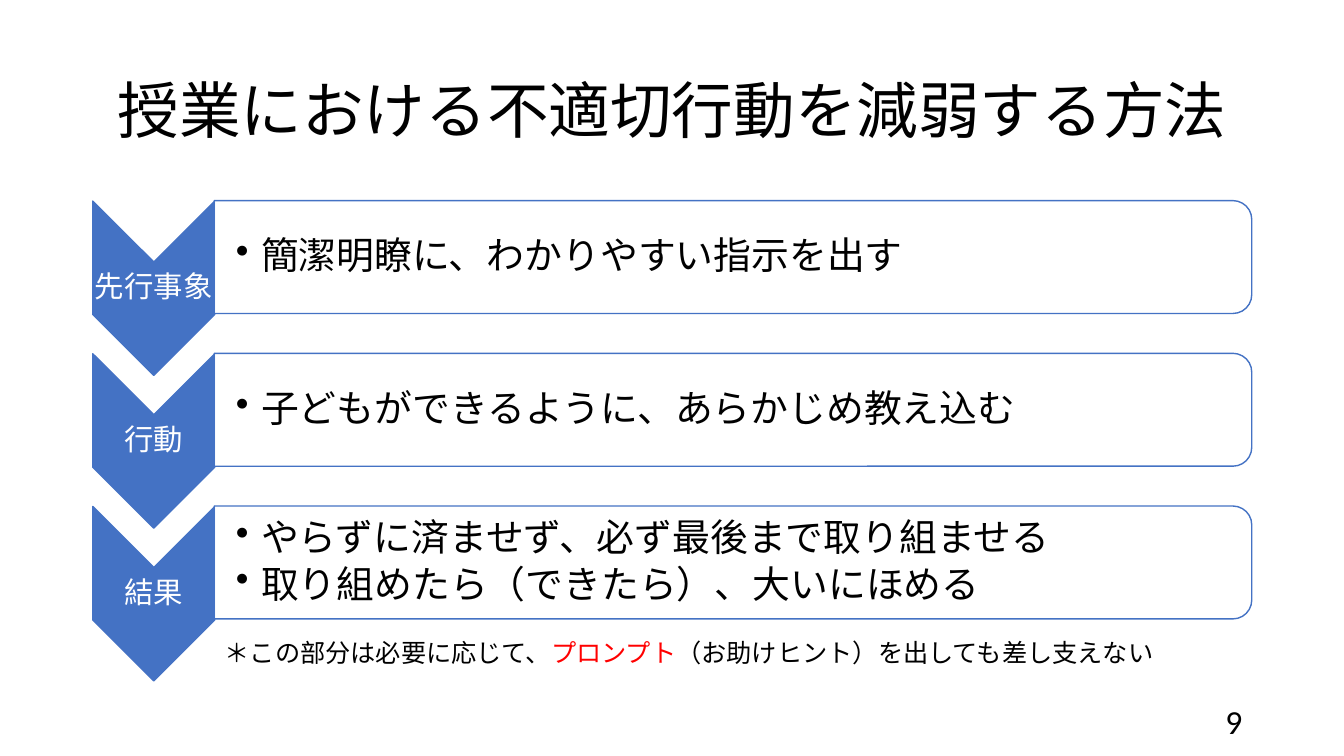
from dataclasses import dataclass

from lxml.etree import SubElement
from pptx import Presentation
from pptx.dml.color import RGBColor as RGB
from pptx.enum.shapes import MSO_SHAPE as SHAPE
from pptx.enum.text import MSO_ANCHOR as ANCHOR, PP_ALIGN as ALIGN
from pptx.oxml.ns import qn
from pptx.util import Inches, Pt


@dataclass(frozen=True)
class Theme:
    blue: RGB = RGB.from_string("4472C4")
    white: RGB = RGB.from_string("FFFFFF")
    black: RGB = RGB.from_string("000000")
    red: RGB = RGB.from_string("FF0000")
    latin: str = "Calibri"
    japanese: str = "Noto Sans CJK JP"
    title: int = 44
    body: int = 27
    number: int = 24
    label: int = 21
    note: int = 18


class Deck:
    """Draws the elements of one slide in a shared theme."""

    def __init__(self, slide, theme):
        self.s = slide
        self.t = theme

    def style(self, r, size, color, font):
        r.font.size = Pt(size)
        r.font.name = font
        r.font.color.rgb = color
        ea = SubElement(r.font._element, qn("a:ea"))
        ea.set("typeface", self.t.japanese)

    def text(self, box, lines, size, color=None, font=None, align=ALIGN.LEFT,
             anchor=ANCHOR.MIDDLE, insets=(0.1, 0.05, 0.1, 0.05), spacing=None, after=0):
        tf = self.s.shapes.add_textbox(*map(Inches, box)).text_frame
        tf.word_wrap = True
        tf.vertical_anchor = anchor
        tf.margin_left, tf.margin_top, tf.margin_right, tf.margin_bottom = map(Inches, insets)
        tf.text = "\n".join(lines)
        for p in tf.paragraphs:
            p.alignment = align
            p.line_spacing = spacing
            p.space_after = Pt(after)
            for r in p.runs:
                self.style(r, size, color or self.t.black, font or self.t.latin)
        return tf

    def title(self, text):
        self.text((0.92, 0.4, 11.5, 1.45), [text], self.t.title,
                  font=self.t.japanese, align=ALIGN.CENTER, spacing=0.9)

    def turned(self, kind, cx, cy, width, height, fill):
        """Adds a preset shape centred on a point and turned a quarter clockwise."""
        box = (cx - width / 2, cy - height / 2, width, height)
        sp = self.s.shapes.add_shape(kind, *map(Inches, box))
        sp.rotation = 90
        sp.shadow.inherit = False
        sp.fill.solid()
        sp.fill.fore_color.rgb = fill
        sp.line.color.rgb = self.t.blue
        sp.line.width = Pt(1)
        return sp

    def bullets(self, box, lines):
        tf = self.text(box, lines, self.t.body, insets=(0.21, 0.02, 0.02, 0.02),
                       spacing=0.9, after=4)
        for p in tf.paragraphs:
            p.level = 1
            pPr = p._p.get_or_add_pPr()
            pPr.set("marL", str(Inches(0.25)))
            pPr.set("indent", str(-Inches(0.25)))
            SubElement(pPr, qn("a:buChar")).set("char", "•")

    def step(self, top, label, lines):
        self.turned(SHAPE.CHEVRON, 1.525, top + 0.87, 1.73, 1.21, self.t.blue)
        self.text((0.92, top + 0.61, 1.21, 0.52), [label], self.t.label, self.t.white,
                  align=ALIGN.CENTER, insets=(0.01,) * 4, spacing=0.9, after=7)
        panel = self.turned(SHAPE.ROUND_2_SAME_RECTANGLE, 7.27, top + 0.56, 1.12, 10.29,
                            self.t.white)
        color = panel.fill._xPr.find(qn("a:solidFill"))[0]
        SubElement(color, qn("a:alpha")).set("val", "90000")
        self.bullets((2.13, top + 0.06, 10.24, 1.01), lines)

    def number(self, text):
        self.text((9.42, 6.95, 3, 0.4), [text], self.t.number, align=ALIGN.RIGHT)

    def note(self, parts):
        tf = self.text((2.13, 6.27, 10.28, 0.4), [], self.t.note, anchor=ANCHOR.TOP)
        for text, color in parts:
            r = tf.paragraphs[0].add_run()
            r.text = text
            self.style(r, self.t.note, color, self.t.japanese)


def main():
    prs = Presentation()
    prs.slide_width, prs.slide_height = Inches(13.33), Inches(7.5)
    theme = Theme()
    deck = Deck(prs.slides.add_slide(prs.slide_layouts[6]), theme)
    deck.title("授業における不適切行動を減弱する方法")
    steps = [
        ("先行事象", ["簡潔明瞭に、わかりやすい指示を出す"]),
        ("行動", ["子どもができるように、あらかじめ教え込む"]),
        ("結果", ["やらずに済ませず、必ず最後まで取り組ませる",
                "取り組めたら（できたら）、大いにほめる"]),
    ]
    first_top, pitch = 1.99, 1.515
    for i, (label, lines) in enumerate(steps):
        deck.step(first_top + i * pitch, label, lines)
    deck.number("9")
    deck.note([
        ("＊この部分は必要に応じて、", theme.black),
        ("プロンプト", theme.red),
        ("（お助けヒント）を出しても差し支えない", theme.black),
    ])
    prs.save("out.pptx")


if __name__ == "__main__":
    main()
